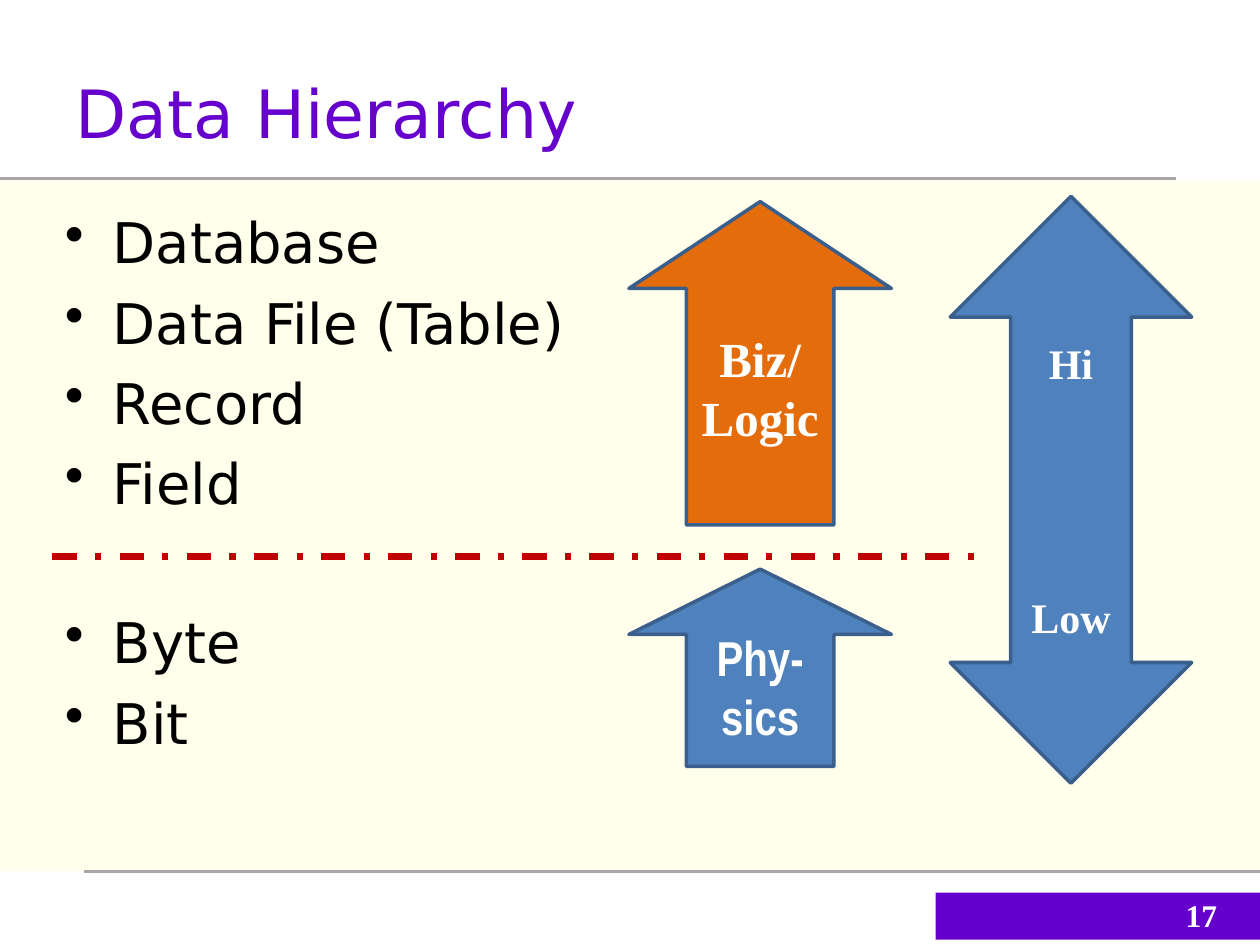
"""Build the Data Hierarchy slide on a grid of 120 columns by 90 rows."""
from dataclasses import dataclass

from lxml.etree import SubElement
from pptx import Presentation
from pptx.dml.color import RGBColor
from pptx.enum.dml import MSO_LINE_DASH_STYLE as Dash
from pptx.enum.shapes import MSO_CONNECTOR as Connector, MSO_SHAPE as Shape
from pptx.enum.text import MSO_ANCHOR as Anchor, PP_ALIGN as Align
from pptx.oxml.ns import qn
from pptx.util import Inches, Pt


@dataclass(frozen=True)
class Theme:
    purple: str = "6600CC"
    cream: str = "FFFFCC"
    cream_alpha: int = 39
    gray: str = "A6A6A6"
    red: str = "C00000"
    orange: str = "E46C0A"
    blue: str = "4F81BD"
    outline: str = "3A5F8C"
    black: str = "000000"
    white: str = "FFFFFF"
    sans: str = "DejaVu Sans"
    serif: str = "Times New Roman"
    narrow: str = "Arial Narrow"
    title_size: int = 38
    body_size: int = 32
    block_size: int = 28
    range_size: int = 24
    number_size: int = 18


THEME = Theme()
COLUMNS, ROWS = 120, 90
BULLET_GAP, GROUP_GAP, RANGE_GAP = 7.5, 52.5, 116
HANGING = 0.38

TITLE = "Data Hierarchy"
NUMBER = "17"
GROUPS = [["Database", "Data File (Table)", "Record", "Field"], ["Byte", "Bit"]]
RULES = [
    ((8, 83), (120, 83), THEME.gray, 2, None),
    ((0, 17), (112, 17), THEME.gray, 2, None),
    ((5, 53), (93, 53), THEME.red, 3.5, Dash.DASH_DOT),
]
UP_ADJUST = (0.562, 0.331)
ARROWS = [
    (Shape.UP_ARROW, (59.9, 19.2, 25, 30.8), UP_ADJUST, THEME.orange,
     ["Biz/ Logic"], THEME.serif, THEME.block_size),
    (Shape.UP_ARROW, (59.9, 54.2, 25, 18.8), UP_ADJUST, THEME.blue,
     ["Phy-sics"], THEME.narrow, THEME.block_size),
    (Shape.UP_DOWN_ARROW, (90.5, 18.7, 23, 55.9), (), THEME.blue,
     ["Hi", "Low"], THEME.serif, THEME.range_size),
]

deck = Presentation()
deck.slide_width, deck.slide_height = Inches(10), Inches(7.5)
page = deck.slides.add_slide(deck.slide_layouts[6])


def across(column):
    return round(deck.slide_width * column / COLUMNS)


def down(row):
    return round(deck.slide_height * row / ROWS)


def place(left, top, width, height):
    return across(left), down(top), across(width), down(height)


def add_block(kind, area, fill, outline=None):
    block = page.shapes.add_shape(kind, *place(*area))
    block.shadow.inherit = False
    block.fill.solid()
    block.fill.fore_color.rgb = RGBColor.from_string(fill)
    if outline:
        block.line.color.rgb = RGBColor.from_string(outline)
        block.line.width = Pt(2)
    else:
        block.line.fill.background()
    return block


def add_rule(start, end, color, width, dash):
    rule = page.shapes.add_connector(
        Connector.STRAIGHT, across(start[0]), down(start[1]), across(end[0]), down(end[1]))
    rule.line.color.rgb = RGBColor.from_string(color)
    rule.line.width = Pt(width)
    if dash:
        rule.line.dash_style = dash
    SubElement(rule.element.spPr, qn("a:effectLst"))


def write(box, lines, font, size, color, bold=False, align=Align.LEFT, anchor=Anchor.TOP):
    frame = box.text_frame
    frame.word_wrap = True
    frame.vertical_anchor = anchor
    frame.text = "\n".join(lines)
    for para in frame.paragraphs:
        para.alignment = align
        para.font.name, para.font.size, para.font.bold = font, Pt(size), bold
        para.font.color.rgb = RGBColor.from_string(color)
    return frame.paragraphs


def add_text(area, lines, *style, **options):
    return write(page.shapes.add_textbox(*place(*area)), lines, *style, **options)


def add_bullet(para):
    properties = para._p.get_or_add_pPr()
    properties.set("marL", str(Inches(HANGING)))
    properties.set("indent", str(-Inches(HANGING)))
    bullet = SubElement(properties, qn("a:buChar"))
    bullet.set("char", "•")
    properties.insert_element_before(bullet, "a:tabLst", "a:defRPr", "a:extLst")


panel = add_block(Shape.RECTANGLE, (0, 17.2, 120, 65.8), THEME.cream)
tint = panel.element.spPr.find(qn("a:solidFill"))[0]
SubElement(tint, qn("a:alpha")).set("val", str(THEME.cream_alpha * 1000))
add_block(Shape.RECTANGLE, (89.1, 85, 30.9, 4.5), THEME.purple)
for rule in RULES:
    add_rule(*rule)

title = add_text((6, 1, 107, 14), [TITLE], THEME.sans, THEME.title_size,
                 THEME.purple, anchor=Anchor.BOTTOM)[0]
title.space_before = title.space_after = Pt(6)

items = [item for group in GROUPS for item in group]
group_heads = [group[0] for group in GROUPS[1:]]
for para in add_text((5, 19.2, 108, 63.4), items, THEME.sans, THEME.body_size, THEME.black):
    para.space_before = Pt(GROUP_GAP if para.text in group_heads else BULLET_GAP)
    add_bullet(para)

add_text((89.1, 84.7, 28, 4.8), [NUMBER], THEME.serif, THEME.number_size, THEME.white,
         bold=True, align=Align.RIGHT, anchor=Anchor.MIDDLE)

for kind, area, adjust, fill, lines, font, size in ARROWS:
    arrow = add_block(kind, area, fill, THEME.outline)
    for index, value in enumerate(adjust):
        arrow.adjustments[index] = value
    paras = write(arrow, lines, font, size, THEME.white, bold=True,
                  align=Align.CENTER, anchor=Anchor.MIDDLE)
    for para in paras[1:]:
        para.space_before = Pt(RANGE_GAP)

deck.save("out.pptx")
